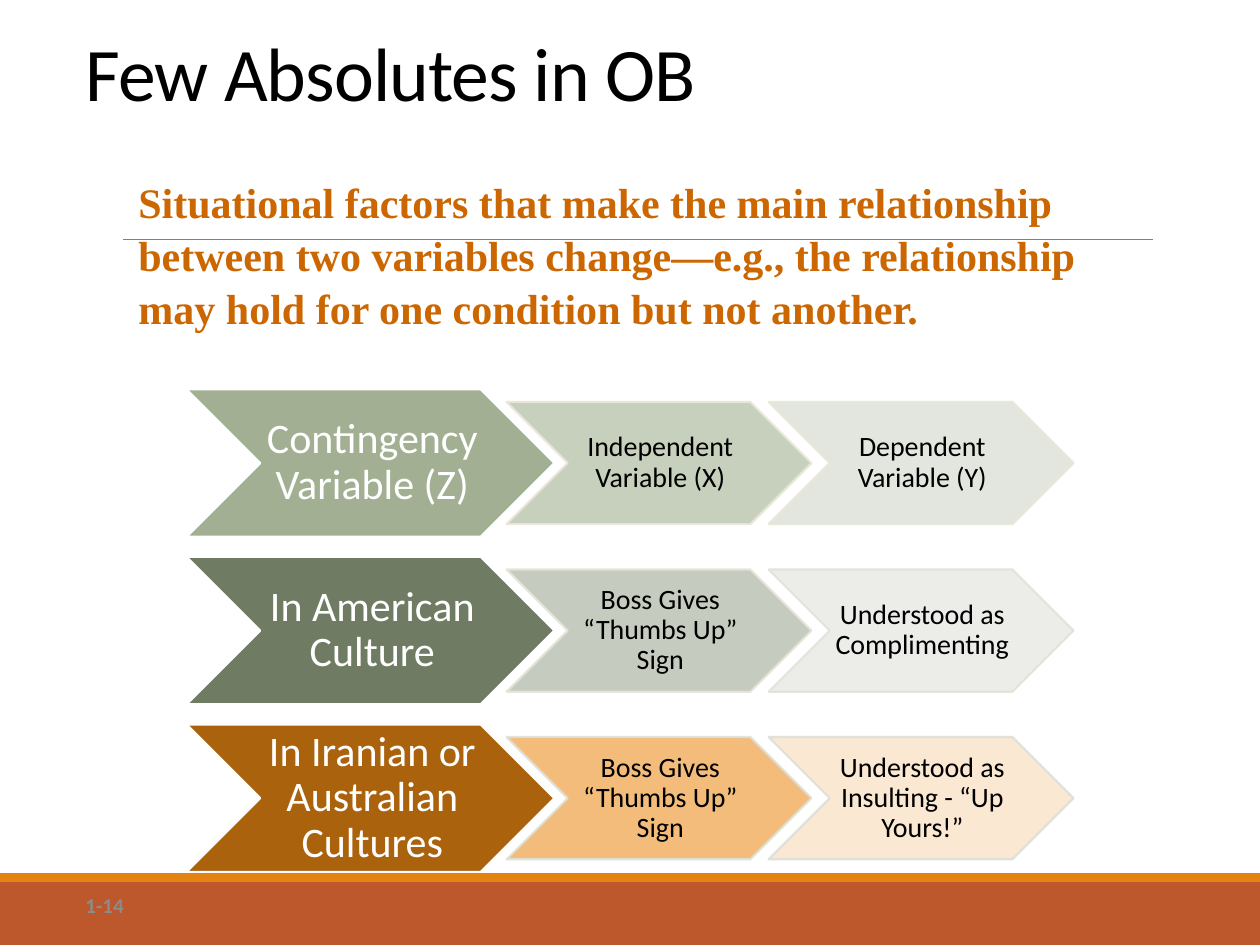
import pptx
import pptx.util
import pptx.dml.color
import pptx.enum.shapes
import pptx.enum.text
import pptx.oxml.ns
import lxml.etree

Inches, Pt = pptx.util.Inches, pptx.util.Pt
RGBColor = pptx.dml.color.RGBColor
MSO_SHAPE = pptx.enum.shapes.MSO_SHAPE
ALIGN = pptx.enum.text.PP_ALIGN
ANCHOR = pptx.enum.text.MSO_ANCHOR
qn = pptx.oxml.ns.qn

TITLE = "Few Absolutes in OB"
DEFINITION = ("Situational factors that make the main relationship between two "
              "variables change—e.g., the relationship may hold for one "
              "condition but not another.")
PAGE = "1-14"

BLACK = RGBColor(0x00, 0x00, 0x00)
WHITE = RGBColor(0xFF, 0xFF, 0xFF)
GRAY = RGBColor(0x80, 0x80, 0x80)
PAGE_GRAY = RGBColor(0x8C, 0x8C, 0x8C)
ORANGE = RGBColor(0xE4, 0x83, 0x12)
RUST = RGBColor(0xBD, 0x58, 0x2C)
AMBER = RGBColor(0xCC, 0x66, 0x00)

ROWS = [
    [("Contingency Variable (Z)", RGBColor(0xA2, 0xAF, 0x92), WHITE),
     ("Independent Variable (X)", RGBColor(0xC1, 0xCA, 0xB6), RGBColor(0xE9, 0xE7, 0xD8)),
     ("Dependent Variable (Y)", RGBColor(0xE0, 0xE4, 0xDB), RGBColor(0xE7, 0xE7, 0xD8))],
    [("In American Culture", RGBColor(0x6F, 0x7B, 0x63), WHITE),
     ("Boss Gives “Thumbs Up” Sign", RGBColor(0xBF, 0xC6, 0xB8), RGBColor(0xE4, 0xE5, 0xD8)),
     ("Understood as Complimenting", RGBColor(0xEA, 0xEC, 0xE7), RGBColor(0xE1, 0xE3, 0xD9))],
    [("In Iranian or Australian Cultures", RGBColor(0xAB, 0x62, 0x0D), WHITE),
     ("Boss Gives “Thumbs Up” Sign", RGBColor(0xF3, 0xB5, 0x6C), RGBColor(0xDE, 0xE1, 0xD9)),
     ("Understood as Insulting - “Up Yours!”", RGBColor(0xFB, 0xE6, 0xCE), RGBColor(0xDC, 0xDF, 0xDA))],
]

FIRST_CENTER, ROW_PITCH = 3.675, 1.33
LEAD = dict(width=2.92, height=1.17, size=24, color=WHITE, alpha=100)
STEP = dict(width=2.42, height=0.97, size=16, color=BLACK, alpha=90)
COLUMNS = [(1.48, LEAD), (4.02, STEP), (6.1, STEP)]


def format_text(frame, text, size, color, font="Calibri", bold=False,
                align=ALIGN.LEFT, spacing=1.0):
    frame.word_wrap = True
    frame.text = text
    paragraph = frame.paragraphs[0]
    paragraph.alignment = align
    paragraph.line_spacing = spacing
    run = paragraph.runs[0]
    run.font.size = Pt(size)
    run.font.name = font
    run.font.bold = bold
    run.font.color.rgb = color
    return run


def add_band(slide, top, height, color):
    band = slide.shapes.add_shape(MSO_SHAPE.RECTANGLE, 0, Inches(top),
                                  Inches(10), Inches(height))
    band.shadow.inherit = False
    band.fill.solid()
    band.fill.fore_color.rgb = color
    band.line.fill.background()


def add_chevron(slide, left, center, style, text, fill, outline):
    chevron = slide.shapes.add_shape(
        MSO_SHAPE.CHEVRON, Inches(left), Inches(center - style["height"] / 2),
        Inches(style["width"]), Inches(style["height"]))
    chevron.shadow.inherit = False
    chevron.fill.solid()
    chevron.fill.fore_color.rgb = fill
    chevron.line.color.rgb = outline
    chevron.line.width = Pt(1.25)
    if style["alpha"] < 100:
        for color in chevron._element.spPr.iter(qn("a:srgbClr")):
            alpha = lxml.etree.SubElement(color, qn("a:alpha"))
            alpha.set("val", str(style["alpha"] * 1000))
    frame = chevron.text_frame
    frame.margin_left = Inches(style["size"] / 800)
    frame.margin_right = 0
    frame.margin_top = frame.margin_bottom = Inches(style["size"] / 1600)
    frame.vertical_anchor = ANCHOR.MIDDLE
    format_text(frame, text, style["size"], style["color"],
                align=ALIGN.CENTER, spacing=0.9)


def main():
    deck = pptx.Presentation()
    deck.slide_width, deck.slide_height = Inches(10), Inches(7.5)
    slide = deck.slides.add_slide(deck.slide_layouts[5])

    add_band(slide, 7, 0.5, RUST)
    add_band(slide, 6.93, 0.07, ORANGE)
    rule = slide.shapes.add_connector(
        pptx.enum.shapes.MSO_CONNECTOR.STRAIGHT,
        Inches(0.98), Inches(1.9), Inches(9.15), Inches(1.9))
    rule.line.color.rgb = GRAY
    rule.line.width = Pt(0.5)
    lxml.etree.SubElement(rule._element.spPr, qn("a:effectLst"))

    title = slide.shapes.title
    title.left, title.top = Inches(0.58), Inches(0.32)
    title.width, title.height = Inches(8.83), Inches(0.66)
    title.text_frame.auto_size = pptx.enum.text.MSO_AUTO_SIZE.NONE
    title.text_frame.vertical_anchor = ANCHOR.BOTTOM
    heading = format_text(title.text_frame, TITLE, 43.2, BLACK, spacing=0.85)
    heading._r.get_or_add_rPr().set("spc", "-50")

    for row, steps in enumerate(ROWS):
        center = FIRST_CENTER + row * ROW_PITCH
        for (left, style), step in zip(COLUMNS, steps):
            add_chevron(slide, left, center, style, *step)

    definition = slide.shapes.add_textbox(Inches(1), Inches(1.33),
                                          Inches(8.08), Inches(1.72))
    format_text(definition.text_frame, DEFINITION, 24, AMBER,
                font="Times New Roman", bold=True, spacing=1.05)

    page = slide.shapes.add_textbox(Inches(0.58), Inches(7.03),
                                    Inches(1), Inches(0.3))
    page.text_frame.vertical_anchor = ANCHOR.MIDDLE
    format_text(page.text_frame, PAGE, 12, PAGE_GRAY, bold=True)

    deck.save("out.pptx")


if __name__ == "__main__":
    main()
